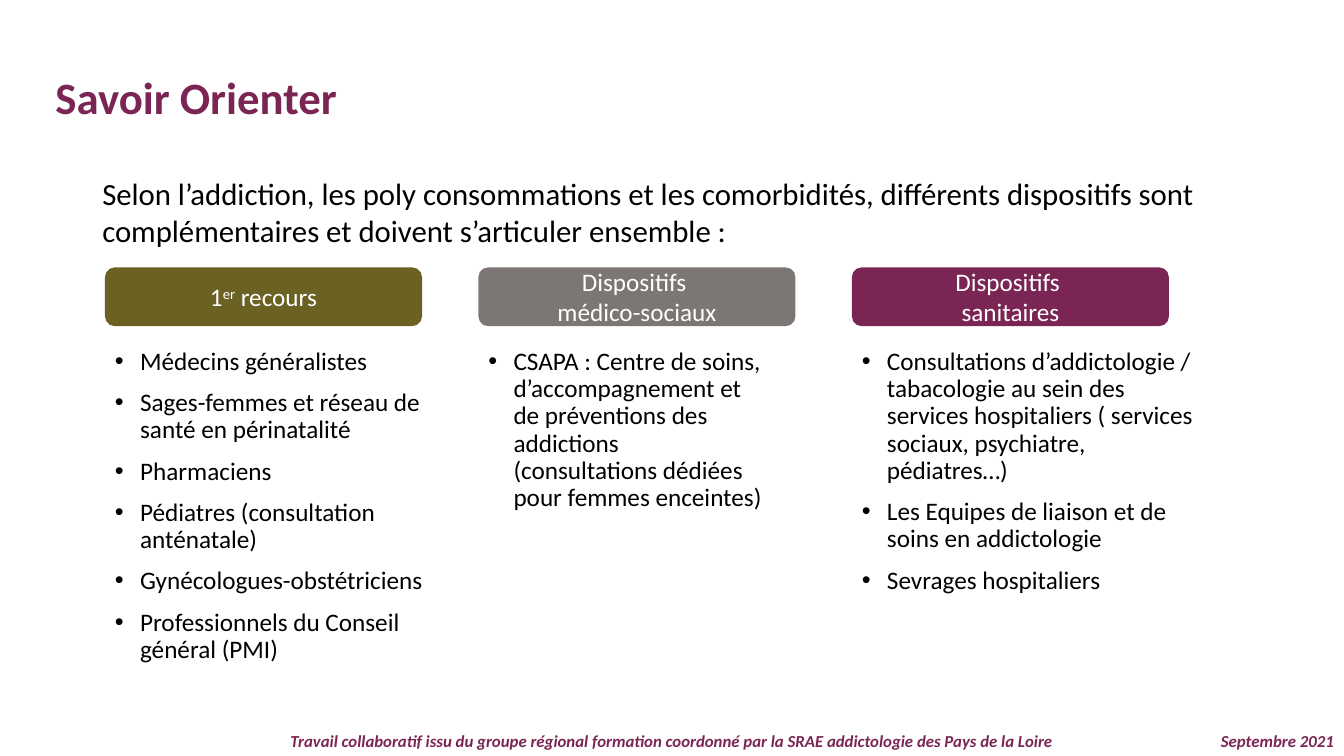
from lxml import etree
from pptx import Presentation
from pptx.dml.color import RGBColor
from pptx.enum.shapes import MSO_SHAPE
from pptx.enum.text import MSO_ANCHOR, PP_ALIGN
from pptx.oxml.ns import qn
from pptx.util import Pt

ROUNDED_RECTANGLE = MSO_SHAPE.ROUNDED_RECTANGLE
MIDDLE = MSO_ANCHOR.MIDDLE
LEFT, CENTER, RIGHT = PP_ALIGN.LEFT, PP_ALIGN.CENTER, PP_ALIGN.RIGHT

PLUM = RGBColor(0x7A, 0x25, 0x53)
OLIVE = RGBColor(0x6B, 0x61, 0x23)
GREY = RGBColor(0x7C, 0x77, 0x75)
BLACK = RGBColor(0, 0, 0)
WHITE = RGBColor(0xFF, 0xFF, 0xFF)

SLIDE_WIDTH, SLIDE_HEIGHT = 960, 540
COLUMNS_LEFT, COLUMNS_TOP, COLUMN_PITCH = 75, 191, 266.75
HEADER_WIDTH, HEADER_HEIGHT, LIST_OFFSET = 226.5, 42, 54.5
BULLET_INDENT = 18

# Each column: header runs as (text, is superscript), colour, list size, items
COLUMNS = [
    ([("1", False), ("er", True), (" recours", False)], OLIVE, (242, 241), [
        "Médecins généralistes",
        "Sages-femmes et réseau de santé en périnatalité",
        "Pharmaciens",
        "Pédiatres (consultation anténatale)",
        "Gynécologues-obstétriciens",
        "Professionnels du Conseil général (PMI)",
    ]),
    ([("Dispositifs \vmédico-sociaux", False)], GREY, (213, 202), [
        "CSAPA : Centre de soins, d’accompagnement et de préventions des "
        "addictions (consultations dédiées pour femmes enceintes)",
    ]),
    ([("Dispositifs \vsanitaires", False)], PLUM, (257, 224), [
        "Consultations d’addictologie / tabacologie au sein des services "
        "hospitaliers ( services sociaux, psychiatre, pédiatres…)",
        "Les Equipes de liaison et de soins en addictologie",
        "Sevrages hospitaliers",
    ]),
]


def style_font(paragraph, size, color, bold=False, italic=False):
    font = paragraph.font
    font.name, font.size = "Calibri", Pt(size)
    font.bold, font.italic = bold, italic
    font.color.rgb = color


def add_text_frame(slide, left, top, width, height):
    shape = slide.shapes.add_textbox(Pt(left), Pt(top), Pt(width), Pt(height))
    shape.text_frame.word_wrap = True
    return shape.text_frame


def add_line_of_text(slide, box, text, size, color, align=LEFT, bold=False,
                     italic=False):
    paragraph = add_text_frame(slide, *box).paragraphs[0]
    paragraph.text = text
    paragraph.alignment = align
    style_font(paragraph, size, color, bold, italic)


def add_header(slide, left, top, runs, color):
    shape = slide.shapes.add_shape(ROUNDED_RECTANGLE, Pt(left), Pt(top),
                                   Pt(HEADER_WIDTH), Pt(HEADER_HEIGHT))
    shape.shadow.inherit = False
    shape.fill.solid()
    shape.fill.fore_color.rgb = color
    shape.line.fill.background()
    shape.text_frame.word_wrap = True
    shape.text_frame.vertical_anchor = MIDDLE
    paragraph = shape.text_frame.paragraphs[0]
    paragraph.alignment = CENTER
    style_font(paragraph, 18, WHITE)
    if len(runs) == 1:
        paragraph.text = runs[0][0]
        return
    for text, is_superscript in runs:
        run = paragraph.add_run()
        run.text = text
        if is_superscript:
            run.font._element.set("baseline", "30000")


def add_bullet_list(slide, left, top, width, height, items):
    frame = add_text_frame(slide, left, top, width, height)
    for index, item in enumerate(items):
        paragraph = frame.add_paragraph() if index else frame.paragraphs[0]
        paragraph.text = item
        paragraph.line_spacing = 0.9
        if index:
            paragraph.space_before = Pt(10)
        properties = paragraph._p.get_or_add_pPr()
        properties.set("marL", str(Pt(BULLET_INDENT)))
        properties.set("indent", str(-Pt(BULLET_INDENT)))
        etree.SubElement(properties, qn("a:buFont"), typeface="Arial")
        etree.SubElement(properties, qn("a:buChar"), char="•")
        style_font(paragraph, 18, BLACK)


def add_columns(slide, left, top):
    for index, (runs, color, list_size, items) in enumerate(COLUMNS):
        column_left = left + index * COLUMN_PITCH
        add_header(slide, column_left, top, runs, color)
        add_bullet_list(slide, column_left, top + LIST_OFFSET, *list_size, items)


def add_footer(slide, top, height):
    add_line_of_text(
        slide, (0, top, SLIDE_WIDTH, height),
        "Travail collaboratif issu du groupe régional formation coordonné "
        "par la SRAE addictologie des Pays de la Loire",
        12, PLUM, CENTER, bold=True, italic=True)
    date_width = 108
    add_line_of_text(
        slide, (SLIDE_WIDTH - date_width, top, date_width, height),
        "Septembre 2021", 12, PLUM, RIGHT, bold=True, italic=True)


def main():
    presentation = Presentation()
    presentation.slide_width = Pt(SLIDE_WIDTH)
    presentation.slide_height = Pt(SLIDE_HEIGHT)
    slide = presentation.slides.add_slide(presentation.slide_layouts[6])
    add_line_of_text(slide, (32.5, 46, 920, 46), "Savoir Orienter", 32, PLUM,
                     bold=True)
    add_line_of_text(
        slide, (66, 121, 828, 70),
        "Selon l’addiction, les poly consommations et les comorbidités, "
        "différents dispositifs sont complémentaires et doivent s’articuler "
        "ensemble :", 22, BLACK)
    add_columns(slide, COLUMNS_LEFT, COLUMNS_TOP)
    add_footer(slide, 518.4, 21.6)
    presentation.save("out.pptx")


if __name__ == "__main__":
    main()
